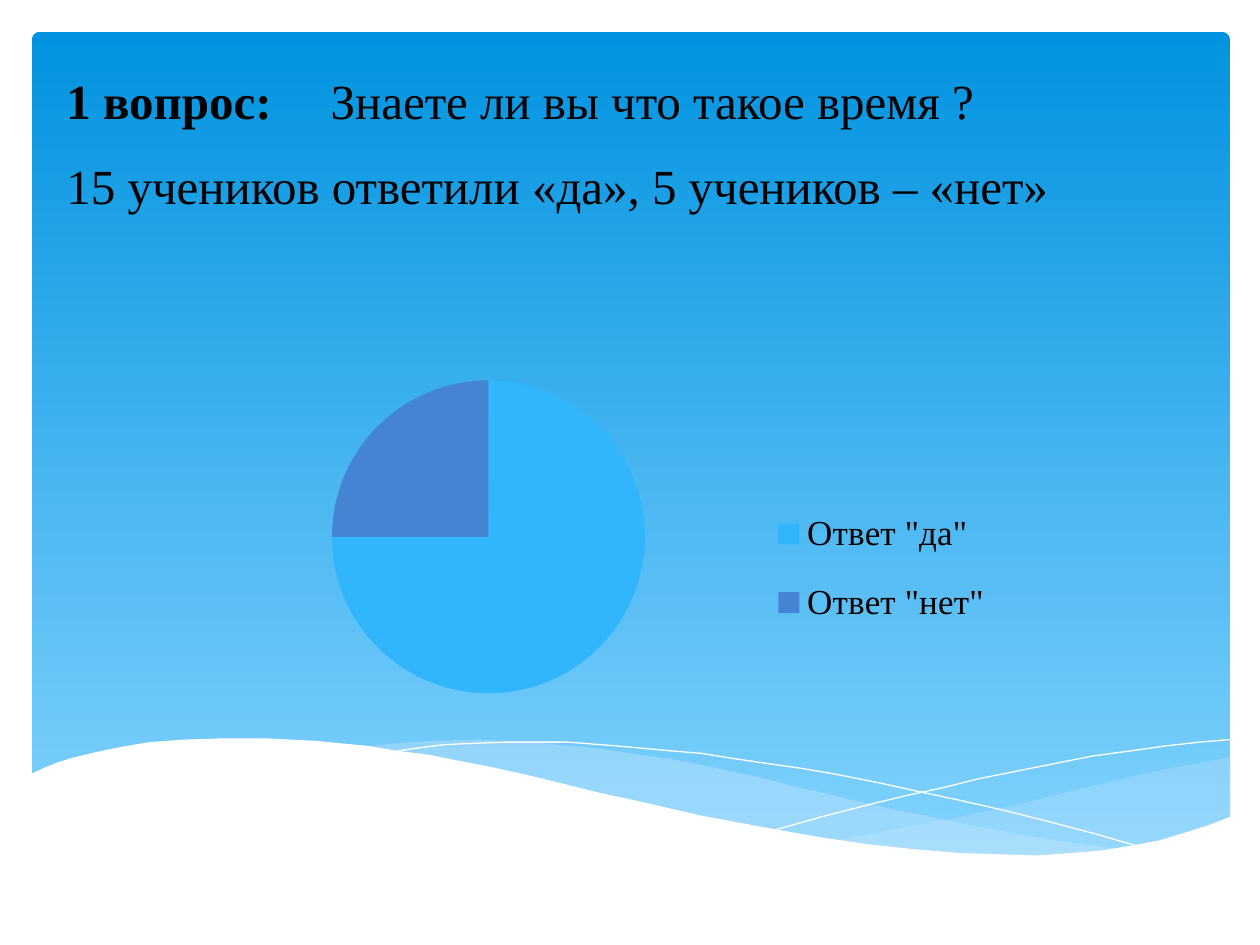
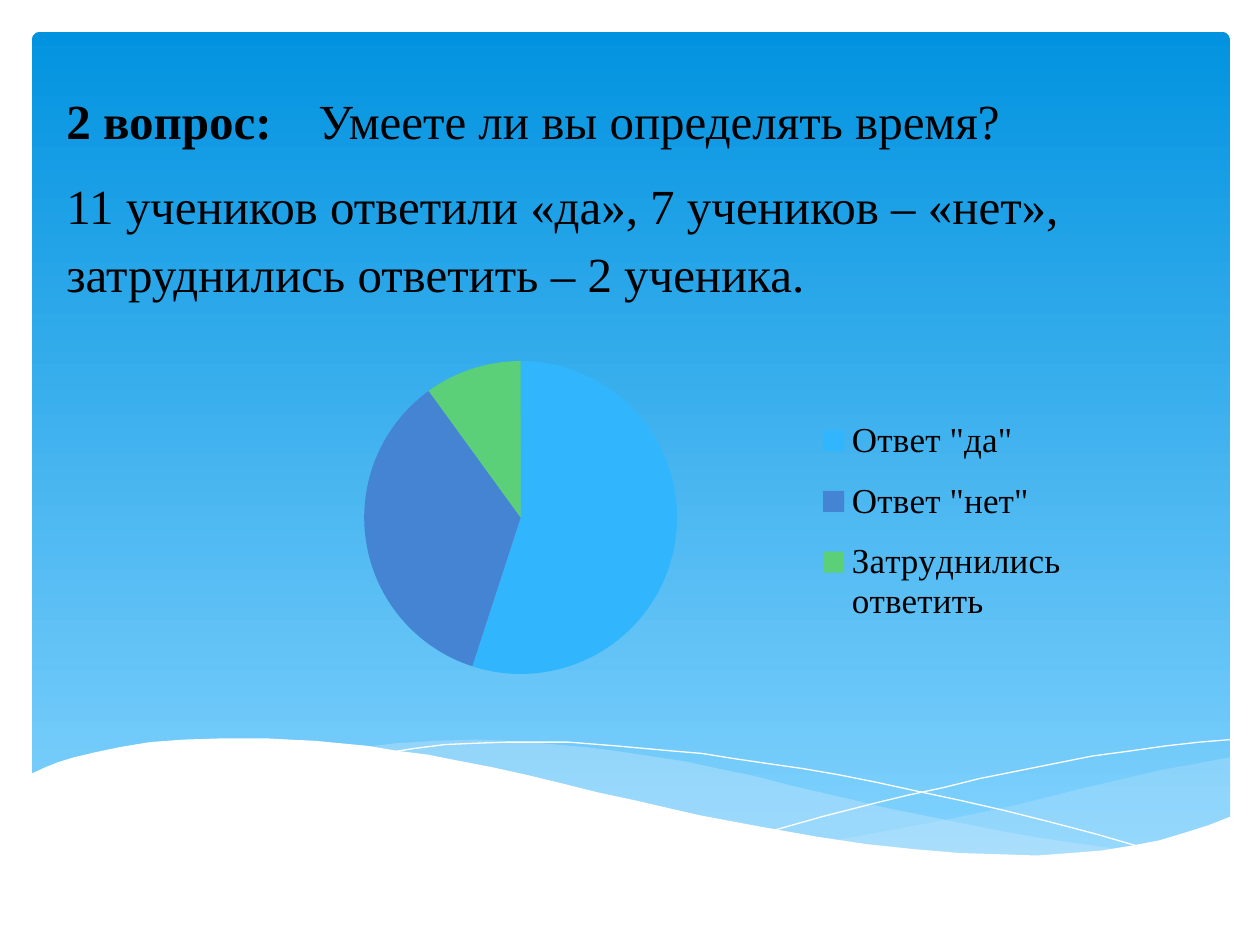
from lxml import etree
from pptx import Presentation
from pptx import util as u
from pptx.chart.data import CategoryChartData
from pptx.dml.color import RGBColor
from pptx.enum import chart as charts, shapes, text
from pptx.oxml import ns

FONT = "Times New Roman"
CHART_FONT = "Cabin"
BLACK, WHITE, PALE_BLUE = "000000", "FFFFFF", "C6E7FC"
PANEL_TOP, PANEL_BOTTOM = "0293E0", "83D3FE"
SLICE_COLOURS = ["31B6FD", "4584D3", "5BD078"]
HUNDREDTH_INCH = u.Cm(2.54) / 100

RIGHT_WAVE = [
    (976, 601), (950, 606), (922, 611), (892, 618), (862, 625), (806, 639),
    (754, 650), (707, 659), (662, 667), (692, 671), (719, 674), (746, 677),
    (770, 679), (804, 680), (836, 679), (864, 677), (890, 674), (914, 669),
    (937, 663), (951, 659), (964, 654), (977, 649), (977, 601)]
MIDDLE_WAVE = [
    (894, 675), (867, 671), (838, 667), (808, 662), (776, 656), (742, 649),
    (707, 642), (669, 633), (630, 624), (599, 616), (570, 610), (542, 604),
    (515, 600), (489, 596), (465, 593), (442, 591), (420, 589), (400, 588),
    (380, 587), (345, 588), (314, 590), (287, 593), (323, 598), (363, 604),
    (405, 613), (450, 624), (491, 634), (530, 642), (567, 650), (602, 657),
    (635, 663), (666, 668), (696, 672), (723, 676), (749, 678), (774, 679),
    (797, 680), (839, 680), (868, 678)]
FALLING_LINE = [
    (310, 597), (329, 594), (353, 591), (375, 590), (402, 589), (451, 589),
    (489, 592), (533, 596), (557, 598), (582, 602), (609, 606), (637, 610),
    (666, 615), (696, 621), (728, 628), (761, 635), (796, 643), (832, 652),
    (870, 662), (908, 673)]
RISING_LINE = [
    (614, 659), (653, 648), (696, 637), (721, 631), (749, 625), (777, 618),
    (807, 612), (837, 606), (867, 600), (897, 596), (925, 592), (952, 589),
    (976, 587)]
WHITE_WAVE = [
    (977, 648), (959, 655), (940, 661), (920, 667), (899, 671), (875, 675),
    (850, 677), (823, 679), (793, 678), (761, 677), (726, 674), (688, 670),
    (648, 664), (603, 656), (555, 647), (529, 641), (503, 635), (475, 629),
    (447, 622), (418, 615), (391, 609), (365, 604), (340, 599), (316, 596),
    (292, 592), (271, 590), (250, 588), (230, 587), (211, 586), (177, 586),
    (146, 587), (119, 589), (95, 593), (76, 597), (59, 601), (46, 605),
    (36, 609), (23, 615), (23, 731), (977, 731)]


def colour(hex_string):
    return RGBColor.from_string(hex_string)


def set_opacity(shape, percent):
    colour_element = shape.fill._xPr.find(ns.qn("a:solidFill"))[0]
    alpha = etree.SubElement(colour_element, ns.qn("a:alpha"))
    alpha.set("val", str(percent * 1000))


def add_panel(slide):
    panel = slide.shapes.add_shape(
        shapes.MSO_SHAPE.ROUNDED_RECTANGLE,
        u.Cm(0.64), u.Cm(0.64), u.Cm(24.16), u.Cm(16.76))
    panel.adjustments[0] = 0.01
    panel.shadow.inherit = False
    panel.line.fill.background()
    panel.fill.gradient()
    panel.fill.gradient_angle = 270
    for stop, shade in zip(panel.fill.gradient_stops, (PANEL_TOP, PANEL_BOTTOM)):
        stop.color.rgb = colour(shade)


def add_curve(slide, points, closed):
    builder = slide.shapes.build_freeform(*points[0], scale=HUNDREDTH_INCH)
    builder.add_line_segments(points[1:], close=closed)
    curve = builder.convert_to_shape()
    curve.shadow.inherit = False
    return curve


def add_wave(slide, points, fill, opacity=100):
    wave = add_curve(slide, points, closed=True)
    wave.line.fill.background()
    wave.fill.solid()
    wave.fill.fore_color.rgb = colour(fill)
    if opacity < 100:
        set_opacity(wave, opacity)


def add_hairline(slide, points):
    hairline = add_curve(slide, points, closed=False)
    hairline.fill.background()
    hairline.line.color.rgb = colour(WHITE)
    hairline.line.width = u.Pt(0)


def add_background(slide):
    add_panel(slide)
    add_wave(slide, RIGHT_WAVE, PALE_BLUE, opacity=29)
    add_wave(slide, MIDDLE_WAVE, PALE_BLUE, opacity=40)
    add_hairline(slide, FALLING_LINE)
    add_hairline(slide, RISING_LINE)
    add_wave(slide, WHITE_WAVE, WHITE)


def format_font(font, size, name=FONT, bold=False):
    font.size = u.Pt(size)
    font.name = name
    font.bold = bold
    font.color.rgb = colour(BLACK)


def add_run(paragraph, content, size=28, bold=False):
    run = paragraph.add_run()
    run.text = content
    format_font(run.font, size, bold=bold)


def add_question(slide, label, question, answer, top, width, height):
    box = slide.shapes.add_textbox(u.Cm(1.09), u.Cm(top), u.Cm(width), u.Cm(height))
    frame = box.text_frame
    frame.word_wrap = True
    frame.auto_size = text.MSO_AUTO_SIZE.SHAPE_TO_FIT_TEXT
    heading, result = frame.paragraphs[0], frame.add_paragraph()
    for paragraph in (heading, result):
        paragraph.line_spacing = 1.15
        paragraph.space_after = u.Pt(10)
    add_run(heading, label, bold=True)
    add_run(heading, "\t" + question)
    add_run(result, answer)


def set_layout(parent, x, y, width, height, inner=False):
    layout = parent.find(ns.qn("c:layout"))
    if layout is None:
        layout = etree.Element(ns.qn("c:layout"))
        position = parent.find(ns.qn("c:legendPos"))
        if position is None:
            parent.insert(0, layout)
        else:
            position.addnext(layout)
    for child in list(layout):
        layout.remove(child)
    manual = etree.SubElement(layout, ns.qn("c:manualLayout"))
    settings = [("layoutTarget", "inner")] if inner else []
    settings += [("xMode", "edge"), ("yMode", "edge"),
                 ("x", x), ("y", y), ("w", width), ("h", height)]
    for tag, value in settings:
        etree.SubElement(manual, ns.qn("c:" + tag)).set("val", str(value))


def add_pie(slide, answers, left, top, width, plot_layout, legend_layout):
    data = CategoryChartData()
    data.categories = list(answers)
    data.add_series("Series 1", list(answers.values()))
    chart = slide.shapes.add_chart(
        charts.XL_CHART_TYPE.PIE,
        u.Cm(left), u.Cm(top), u.Cm(width), u.Cm(7.01), data).chart
    chart.has_title = False
    format_font(chart.font, 10, name=CHART_FONT)
    chart.has_legend = True
    chart.legend.position = charts.XL_LEGEND_POSITION.RIGHT
    chart.legend.include_in_layout = False
    format_font(chart.legend.font, 20)
    plot = chart.plots[0]
    plot.vary_by_categories = True
    for index, shade in enumerate(SLICE_COLOURS[:len(answers)]):
        slice_format = plot.series[0].points[index].format
        slice_format.fill.solid()
        slice_format.fill.fore_color.rgb = colour(shade)
        slice_format.line.fill.background()
    plot_area = chart.element.find(".//" + ns.qn("c:plotArea"))
    set_layout(plot_area, *plot_layout, inner=True)
    set_layout(chart.element.find(".//" + ns.qn("c:legend")), *legend_layout)


def add_question_slide(presentation, question, pie):
    slide = presentation.slides.add_slide(presentation.slide_layouts[6])
    add_background(slide)
    add_question(slide, **question)
    add_pie(slide, **pie)


def main():
    presentation = Presentation()
    presentation.slide_width = u.Cm(25.4)
    presentation.slide_height = u.Cm(19.05)
    add_question_slide(
        presentation,
        question=dict(
            label="1 вопрос:",
            question=" Знаете ли вы что такое время ?",
            answer="15 учеников ответили «да», 5 учеников – «нет»",
            top=1.12, width=22.4, height=3.38),
        pie=dict(
            answers={'Ответ "да"': 75, 'Ответ "нет"': 25},
            left=3.51, top=7.32, width=17.6,
            plot_layout=(0.18, 0.05, 0.36, 0.9),
            legend_layout=(0.68, 0.35, 0.26, 0.48)))
    add_question_slide(
        presentation,
        question=dict(
            label="2 вопрос:",
            question="Умеете ли вы определять время?",
            answer="11 учеников ответили «да», 7 учеников – «нет», "
                   "затруднились ответить – 2 ученика.",
            top=1.52, width=23.19, height=4.75),
        pie=dict(
            answers={'Ответ "да"': 55, 'Ответ "нет"': 35,
                     "Затруднились ответить": 10},
            left=3.1, top=6.93, width=19.99,
            plot_layout=(0.21, 0.05, 0.32, 0.9),
            legend_layout=(0.66, 0.16, 0.27, 0.7)))
    presentation.save("out.pptx")


if __name__ == "__main__":
    main()
